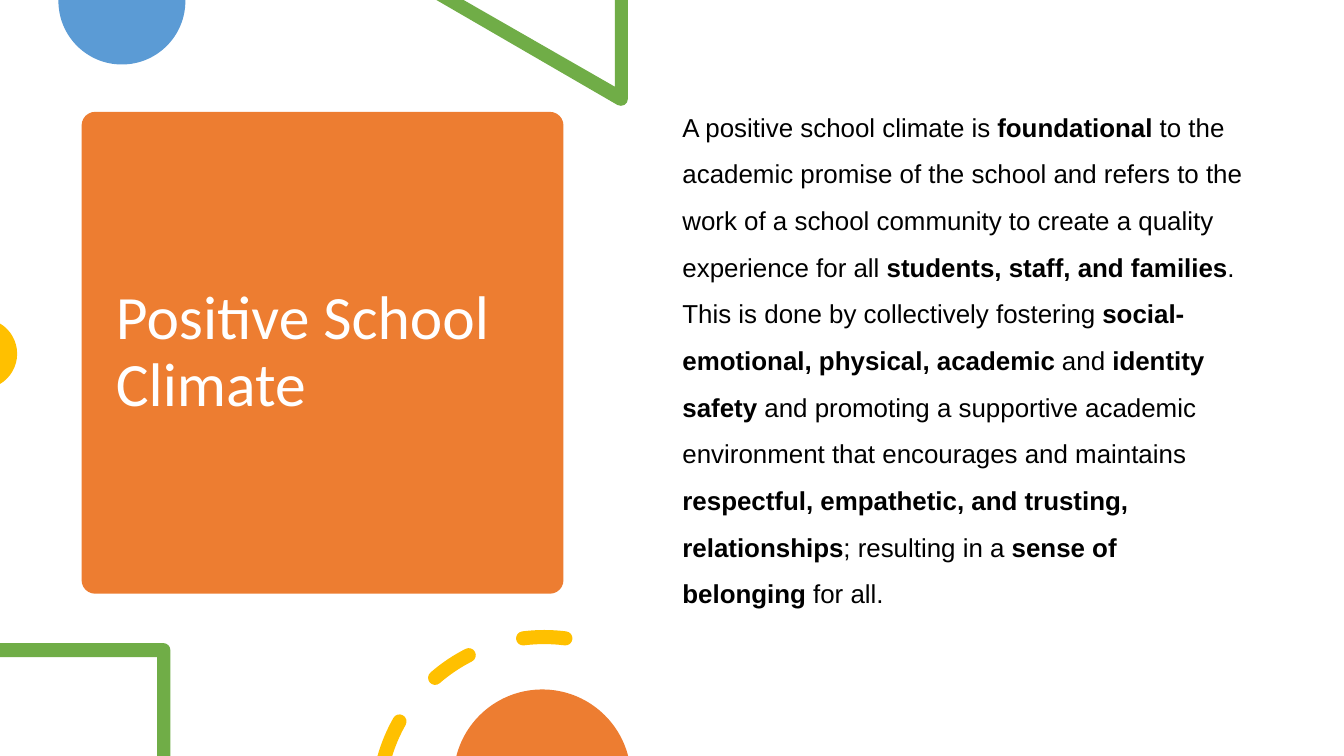
from math import acos, cos, degrees, radians, sin, tan

from lxml.etree import SubElement
from pptx import Presentation
from pptx.dml.color import RGBColor
from pptx.enum.shapes import MSO_SHAPE
from pptx.enum.text import MSO_ANCHOR, MSO_AUTO_SIZE, PP_ALIGN
from pptx.oxml.ns import qn
from pptx.util import Inches, Pt

WIDTH, HEIGHT = 40 / 3, 7.5
ORANGE, BLUE, GREEN, YELLOW = "ED7D31", "5B9BD5", "70AD47", "FFC000"
WHITE, BLACK = "FFFFFF", "000000"


def color(hex_text):
    return RGBColor.from_string(hex_text)


def on_circle(x, y, radius, angle):
    """Point at an angle in degrees, clockwise from the top."""
    return x + radius * sin(radians(angle)), y - radius * cos(radians(angle))


def arc(x, y, radius, start, end, pieces=1):
    """First point of an arc, then one list of three curve points per piece."""
    step = (end - start) / pieces
    reach = radius * 4 / 3 * tan(radians(step) / 4)
    items = [[on_circle(x, y, radius, start)]]
    for number in range(pieces):
        angle = start + step * number
        first, last = (on_circle(x, y, radius, a) for a in (angle, angle + step))
        items.append([on_circle(*first, reach, angle + 90),
                      on_circle(*last, -reach, angle + step + 90), last])
    return items


def corners(*points):
    return [[point] for point in points]


def dash(x, y, radius, start, end, thickness=0.14):
    """Outline of a round-capped dash on a ring, cut flat at the slide's bottom."""
    half = thickness / 2
    outer, inner = radius + half, radius - half
    outer_start = inner_start = start
    start_cap = []
    if start is None:
        outer_start, inner_start = (-degrees(acos((y - HEIGHT) / r)) for r in (outer, inner))
    else:
        start_cap = arc(*on_circle(x, y, radius, start), half, start + 180, start + 360, 2)[1:]
    end_cap = arc(*on_circle(x, y, radius, end), half, end, end + 180, 2)[1:]
    return (arc(x, y, outer, outer_start, end) + end_cap
            + arc(x, y, inner, end, inner_start)[1:] + start_cap)


def add_text(paragraph, text, font="Calibri", size=18, fill=BLACK, bold=False):
    run = paragraph.add_run()
    run.text = text
    run.font.name = font
    run.font.size = Pt(size)
    run.font.bold = bold
    run.font.color.rgb = color(fill)


class SlideBuilder:
    def __init__(self, presentation):
        self.slide = presentation.slides.add_slide(presentation.slide_layouts[1])
        self.shapes = self.slide.shapes

    def paint(self, shape, fill):
        shape.shadow.inherit = False
        shape.fill.solid()
        shape.fill.fore_color.rgb = color(fill)
        shape.line.fill.background()

    def card(self, left, top, width, height, fill, corner):
        shape = self.shapes.add_shape(MSO_SHAPE.ROUNDED_RECTANGLE, Inches(left),
                                      Inches(top), Inches(width), Inches(height))
        shape.adjustments[0] = corner
        self.paint(shape, fill)

    def outline(self, fill, *contours):
        """Draw closed contours; items of three points become curves."""
        builder = None
        for contour in contours:
            points = [(Inches(x), Inches(y)) for item in contour for x, y in item]
            if builder is None:
                builder = self.shapes.build_freeform(*points[0])
            else:
                builder.move_to(*points[0])
            builder.add_line_segments(points[1:], close=True)
        shape = builder.convert_to_shape()
        lines = iter(list(shape._element.iter(qn("a:lnTo"))))
        for item in (item for contour in contours for item in contour[1:]):
            segments = [next(lines) for _ in item]
            if len(segments) == 3:
                parent = segments[0].getparent()
                curve = SubElement(parent, qn("a:cubicBezTo"))
                segments[0].addprevious(curve)
                for segment in segments:
                    curve.append(segment[0])
                    parent.remove(segment)
        self.paint(shape, fill)

    def placeholder(self, index, left, top, width, height, anchor, spacing):
        """Place a template placeholder in front and return its paragraph."""
        shape = self.slide.placeholders[index]
        shape.left, shape.top = Inches(left), Inches(top)
        shape.width, shape.height = Inches(width), Inches(height)
        self.shapes._spTree.append(shape._element)
        frame = shape.text_frame
        frame.word_wrap = True
        frame.auto_size = MSO_AUTO_SIZE.NONE
        frame.vertical_anchor = anchor
        paragraph = frame.paragraphs[0]
        paragraph.alignment = PP_ALIGN.LEFT
        paragraph.line_spacing = spacing
        paragraph.space_before = Pt(0)
        properties = paragraph._p.get_or_add_pPr()
        properties.set("marL", "0")
        properties.set("indent", "0")
        SubElement(properties, qn("a:buNone"))
        return paragraph


def main():
    presentation = Presentation()
    presentation.slide_width, presentation.slide_height = Inches(WIDTH), Inches(HEIGHT)
    builder = SlideBuilder(presentation)

    # Title card
    builder.card(0.81, 1.11, 4.78, 4.78, ORANGE, corner=0.028)
    title = builder.placeholder(0, 1.05, 1.22, 4.31, 4.56, MSO_ANCHOR.MIDDLE, 0.9)
    add_text(title, "Positive School Climate", size=44, fill=WHITE)

    # Decorations on the top and left edges
    builder.outline(BLUE, corners((1.84, 0), (0.58, 0)) + arc(1.21, 0.01, 0.63, 270, 90, 2))
    builder.outline(GREEN, corners((6.23, 0), (6.1, 0), (6.1, 0.86), (4.6, 0), (4.33, 0))
                    + arc(6.16, 0.98, 0.07, 210, 90, 2))
    builder.outline(YELLOW, arc(-0.18, 3.51, 0.35, 31, 149, 2))

    # Definition, with the key words in bold
    body = builder.placeholder(1, 6.67, 0.9, 5.75, 5.35, MSO_ANCHOR.TOP, 1.5)
    definition = [
        "A positive school climate is ", "foundational",
        " to the academic promise of the school and refers to the work of a school "
        "community to create a quality experience for all ",
        "students, staff, and families",
        ". This is done by collectively fostering ",
        "social-emotional, physical, academic", " and ", "identity safety ",
        "and promoting a supportive academic environment that encourages and maintains ",
        "respectful, empathetic, and trusting, relationships",
        "; resulting in a ", "sense of belonging", " for all.",
    ]
    for number, text in enumerate(definition):
        add_text(body, text, font="Arial", size=18.5, bold=number % 2 == 1)

    # Decorations on the bottom edge
    builder.outline(GREEN, corners((0, 6.38)) + arc(1.62, 6.45, 0.07, 0, 90)
                    + corners((1.69, HEIGHT), (1.56, HEIGHT), (1.56, 6.52), (0, 6.52)))
    dash_angles = [(None, -60.5), (-41, -27), (-7.3, 7.3)]
    builder.outline(YELLOW, *(dash(5.4, 7.97, 1.65, *angles) for angles in dash_angles))
    builder.outline(ORANGE, arc(5.38, 7.72, 0.88, -75.5, 75.5, 2))

    presentation.save("out.pptx")


if __name__ == "__main__":
    main()
